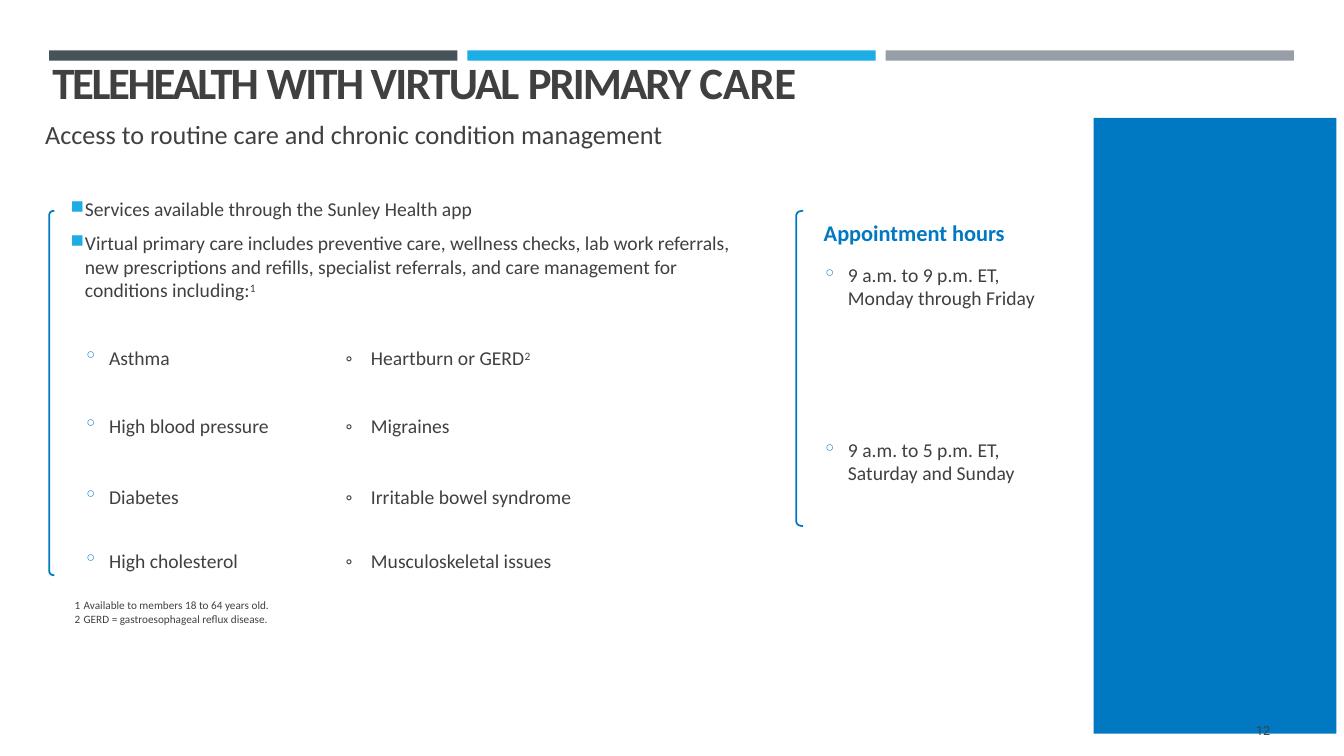
from lxml.etree import SubElement
from pptx import Presentation
from pptx.dml.color import RGBColor
from pptx.enum.shapes import MSO_SHAPE
from pptx.enum.text import MSO_ANCHOR, PP_ALIGN
from pptx.oxml.ns import qn
from pptx.util import Cm, Pt

DARK = RGBColor(0x46, 0x53, 0x59)
SKY = RGBColor(0x1C, 0xAD, 0xE4)
GREY = RGBColor(0x96, 0x9F, 0xA7)
BLUE = RGBColor(0x00, 0x79, 0xC2)
INK = RGBColor(0x40, 0x40, 0x40)

# Runs are (text, extra run attributes); letter spacing is in hundredths of a point.
TITLE = [
    ("TELEHEALTH ", {"spc": -170}),
    ("WITH VIRTUAL ", {"spc": -130}),
    ("PRIMARY ", {"spc": -140}),
    ("CARE", {"spc": -30}),
]
SUBTITLE = "Access to routine care and chronic condition management"
RAISED = {"baseline": 24000}
SERVICES = [
    [("Services available through the Sunley Health app", {})],
    [("Virtual primary care includes preventive care, wellness checks, "
      "lab work referrals, new prescriptions and refills, specialist referrals, "
      "and care management for conditions including:", {}), ("1", RAISED)],
]
# Left condition, right condition, footnote mark, space before in points
CONDITIONS = [
    ("Asthma", "Heartburn or GERD", "2", 25.5),
    ("High blood pressure", "Migraines", "", 31.5),
    ("Diabetes", "Irritable bowel syndrome", "", 34),
    ("High cholesterol", "Musculoskeletal issues", "", 29),
]
HOURS_HEADING = "Appointment hours"
WEEKDAY_HOURS = "9 a.m. to 9 p.m. ET, Monday through Friday"
WEEKEND_HOURS = "9 a.m. to 5 p.m. ET, Saturday and Sunday"
FOOTNOTES = [
    "Available to members 18 to 64 years old.",
    "GERD = gastroesophageal reflux disease.",
]
PAGE_NUMBER = "12"

BAR_COLOURS = [DARK, SKY, GREY]
BAR_LEFT, BAR_TOP, BAR_WIDTH, BAR_HEIGHT, BAR_PITCH = 1.24, 1.27, 10.29, 0.26, 10.54
PANEL = (27.56, 2.97, 6.12, 15.52)
BRACKETS = [(1.24, 5.31, 0.13, 9.19), (20.07, 5.31, 0.17, 7.95)]

BODY = {"size": Pt(14), "name": "Calibri", "bold": False}
RING = {"char": "◦", "colour": BLUE, "size": 92}
SQUARE = {"char": "■", "colour": SKY, "size": 92}
NUMBER = {"auto": "arabicPlain"}


def add_rectangle(page, place, colour):
    box = page.shapes.add_shape(MSO_SHAPE.RECTANGLE, *map(Cm, place))
    box.shadow.inherit = False
    box.fill.solid()
    box.fill.fore_color.rgb = colour
    box.line.fill.background()


def add_bracket(page, left, top, width, height):
    """Draw a left bracket with softened corners."""
    right, bottom = left + width, top + height
    corner = [(left + width * 0.4, 0.02), (left + width * 0.15, 0.05), (left, 0.1)]
    points = [(x, top + y) for x, y in corner]
    points += [(x, bottom - y) for x, y in reversed(corner)]
    points.append((right, bottom))
    builder = page.shapes.build_freeform(Cm(right), Cm(top), scale=1.0)
    builder.add_line_segments([(Cm(x), Cm(y)) for x, y in points], close=False)
    bracket = builder.convert_to_shape()
    bracket.shadow.inherit = False
    bracket.fill.background()
    bracket.line.color.rgb = BLUE
    bracket.line.width = Pt(1.25)


def add_text_box(page, place, anchor=MSO_ANCHOR.TOP):
    frame = page.shapes.add_textbox(*map(Cm, place)).text_frame
    settings = {
        "word_wrap": True, "vertical_anchor": anchor, "margin_left": 0,
        "margin_right": 0, "margin_top": Cm(0.05), "margin_bottom": 0,
    }
    for name, value in settings.items():
        setattr(frame, name, value)
    return frame


def add_bullet(properties, bullet):
    if "colour" in bullet:
        colour = SubElement(properties, qn("a:buClr"))
        SubElement(colour, qn("a:srgbClr"), val=str(bullet["colour"]))
    if "size" in bullet:
        SubElement(properties, qn("a:buSzPct"), val=str(bullet["size"] * 1000))
    if "auto" in bullet:
        SubElement(properties, qn("a:buAutoNum"), type=bullet["auto"])
    else:
        SubElement(properties, qn("a:buChar"), char=bullet["char"])


def add_paragraph(frame, runs, font=BODY, colour=INK, margin=0.0, hanging=0.0,
                  bullet=None, tabs=(), **spacing):
    """Fill the empty first paragraph, or append one; margin, hanging and tabs in cm."""
    para = frame.paragraphs[0]
    if para.runs:
        para = frame.add_paragraph()
    for name, value in spacing.items():
        setattr(para, name, value)
    properties = para._p.get_or_add_pPr()
    properties.set("marL", str(Cm(margin)))
    properties.set("indent", str(-Cm(hanging)))
    if bullet:
        add_bullet(properties, bullet)
    if tabs:
        tab_list = SubElement(properties, qn("a:tabLst"))
        for stop in tabs:
            SubElement(tab_list, qn("a:tab"), pos=str(Cm(stop)), algn="l")
    for text, extras in [(runs, {})] if isinstance(runs, str) else runs:
        span = para.add_run()
        span.text = text
        for name, value in font.items():
            setattr(span.font, name, value)
        span.font.color.rgb = colour
        for name, value in extras.items():
            span._r.get_or_add_rPr().set(name, str(value))


def add_services(page):
    frame = add_text_box(page, (1.78, 4.83, 17.25, 9.68), MSO_ANCHOR.MIDDLE)
    for runs in SERVICES:
        add_paragraph(frame, runs, margin=0.36, hanging=0.36, bullet=SQUARE,
                      space_before=Pt(1.3), space_after=Pt(6))
    for left, right, mark, gap in CONDITIONS:
        runs = [(f"{left}\t◦\t{right}", {})]
        if mark:
            runs.append((mark, RAISED))
        add_paragraph(frame, runs, margin=0.97, hanging=0.64, bullet=RING,
                      tabs=(0.97, 6.93, 7.57), space_before=Pt(gap))


def add_hours(page):
    weekdays = add_text_box(page, (20.68, 5.46, 5.6, 2.34))
    add_paragraph(weekdays, HOURS_HEADING, {**BODY, "size": Pt(16), "bold": True},
                  BLUE, margin=0.08, space_before=Pt(1.3))
    weekend = add_text_box(page, (20.68, 11.02, 5.5, 1.24))
    for frame, text, gap in [(weekdays, WEEKDAY_HOURS, 13.5), (weekend, WEEKEND_HOURS, 4)]:
        add_paragraph(frame, text, margin=0.69, hanging=0.64, bullet=RING,
                      line_spacing=Pt(16), space_before=Pt(gap))


def main():
    deck = Presentation()
    deck.slide_width, deck.slide_height = Cm(33.87), Cm(19.05)
    page = deck.slides.add_slide(deck.slide_layouts[6])

    for index, colour in enumerate(BAR_COLOURS):
        left = BAR_LEFT + index * BAR_PITCH
        add_rectangle(page, (left, BAR_TOP, BAR_WIDTH, BAR_HEIGHT), colour)
    add_rectangle(page, PANEL, BLUE)
    for bracket in BRACKETS:
        add_bracket(page, *bracket)

    title = add_text_box(page, (1.27, 1.32, 30, 1.42), MSO_ANCHOR.BOTTOM)
    add_paragraph(title, TITLE, {**BODY, "size": Pt(32), "bold": True}, margin=0.05)
    subtitle = add_text_box(page, (1.09, 2.92, 17, 0.84))
    add_paragraph(subtitle, SUBTITLE, {**BODY, "size": Pt(18.7)}, margin=0.05,
                  space_before=Pt(1.4))
    add_hours(page)
    add_services(page)

    notes = add_text_box(page, (1.83, 15.04, 5.64, 0.74))
    for index, text in enumerate(FOOTNOTES):
        add_paragraph(notes, text, {**BODY, "size": Pt(8)}, margin=0.28, hanging=0.23,
                      bullet=NUMBER, space_before=Pt(0 if index else 1.3))
    number = add_text_box(page, (29.34, 17.86, 2.67, 1.02), MSO_ANCHOR.MIDDLE)
    add_paragraph(number, PAGE_NUMBER, {"size": Pt(9), "name": "Roboto"},
                  alignment=PP_ALIGN.RIGHT)
    deck.save("out.pptx")


if __name__ == "__main__":
    main()
